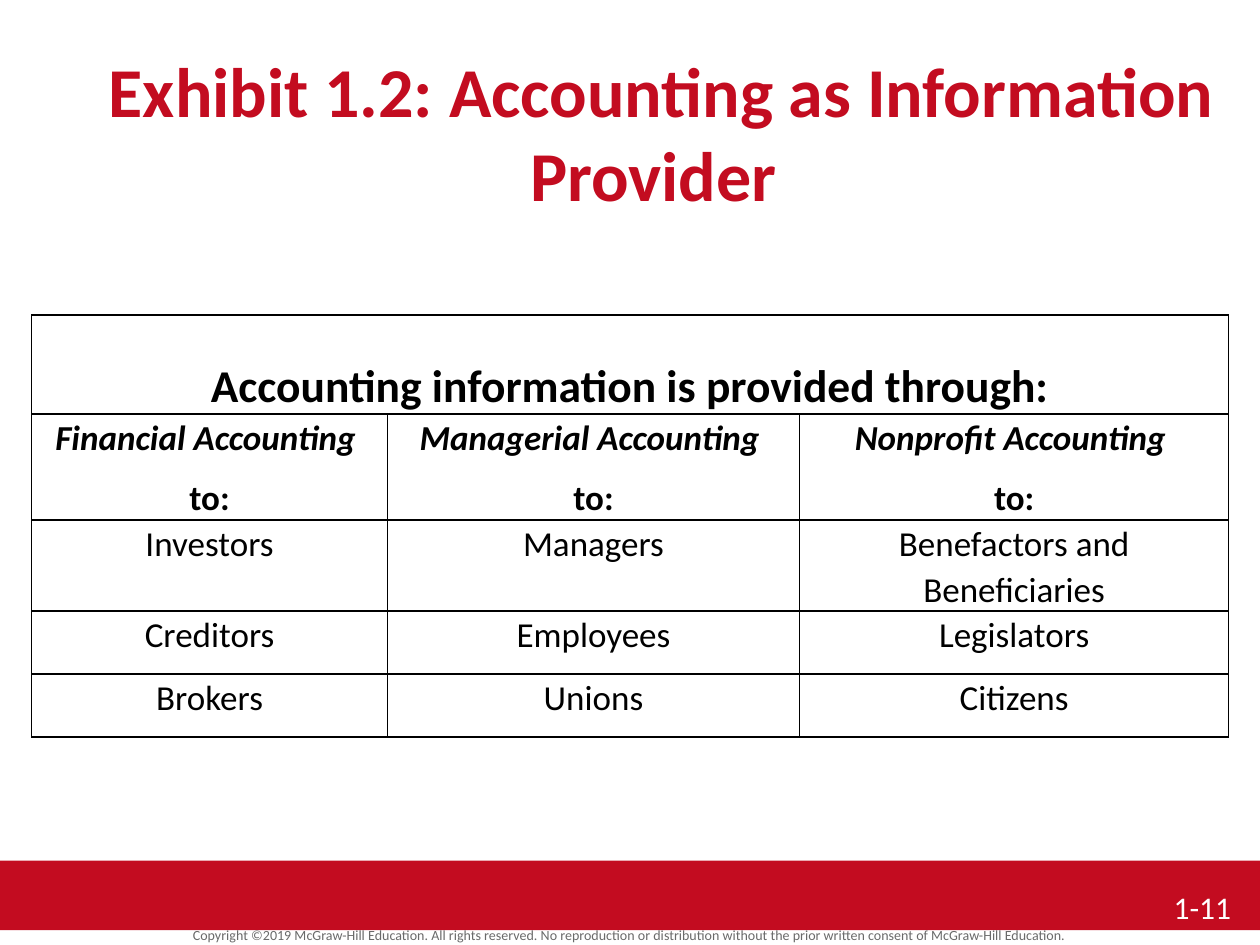
from lxml import etree
from pptx import Presentation
from pptx.dml.color import RGBColor
from pptx.enum.shapes import MSO_SHAPE as Shape
from pptx.enum.text import MSO_ANCHOR as Anchor, MSO_AUTO_SIZE as AutoSize, PP_ALIGN as Align
from pptx.oxml.ns import qn
from pptx.util import Cm, Pt

RED, BLACK, WHITE, GRAY = "C30C20", "000000", "FFFFFF", "6A6A6A"
COLUMN_WIDTHS = [7.17, 8.31, 8.65]
ROW_HEIGHTS = [2.0, 2.13, 1.84, 1.27, 1.27]
HEADING = "Accounting information is provided through:"
BRANCHES = ["Financial Accounting ", "Managerial Accounting ", "Nonprofit Accounting "]
USERS = [
    ["Investors", "Managers", "Benefactors and Beneficiaries"],
    ["Creditors", "Employees", "Legislators"],
    ["Brokers", "Unions", "Citizens"],
]


def color(value):
    return RGBColor.from_string(value)


def format_paragraph(paragraph, size, text_color, bold=False, italic=False, align=Align.CENTER):
    paragraph.alignment = align
    for run in paragraph.runs:
        font = run.font
        font.name, font.size = "Calibri", Pt(size)
        font.bold, font.italic = bold, italic
        font.color.rgb = color(text_color)


def add_title(slide, left, top, width, height):
    title = slide.shapes.title
    title.left, title.top, title.width, title.height = Cm(left), Cm(top), Cm(width), Cm(height)
    frame = title.text_frame
    frame.text = "Exhibit 1.2: Accounting as Information Provider "
    frame.word_wrap = True
    frame.auto_size = AutoSize.NONE
    frame.vertical_anchor = Anchor.TOP
    format_paragraph(frame.paragraphs[0], 40, RED, bold=True)


def add_label(slide, text, left, top, width, height):
    frame = slide.shapes.add_textbox(Cm(left), Cm(top), Cm(width), Cm(height)).text_frame
    frame.text = text
    frame.word_wrap = True
    return frame


def add_footer(slide, left, top, width, height):
    band = slide.shapes.add_shape(Shape.RECTANGLE, Cm(left), Cm(top), Cm(width), Cm(height))
    band.shadow.inherit = False
    band.fill.solid()
    band.fill.fore_color.rgb = color(RED)
    band.line.fill.background()

    notice = add_label(
        slide,
        "Copyright ©2019 McGraw-Hill Education. All rights reserved. No reproduction or "
        "distribution without the prior written consent of McGraw-Hill Education.",
        left, top + 1.29, width, 0.48)
    notice.margin_top = notice.margin_bottom = 0
    notice.vertical_anchor = Anchor.MIDDLE
    notice.paragraphs[0].line_spacing = 0.8
    format_paragraph(notice.paragraphs[0], 8, GRAY)

    number = add_label(slide, "1-11", left + width - 2.34, top + 0.43, 2.34, 1.07)
    number.margin_left = Cm(0.6)
    format_paragraph(number.paragraphs[0], 18, WHITE, align=Align.LEFT)


def style_cell(cell):
    properties = cell._tc.get_or_add_tcPr()
    for side in ("a:lnL", "a:lnR", "a:lnT", "a:lnB"):
        line = etree.SubElement(properties, qn(side), w=str(Pt(1)))
        fill = etree.SubElement(line, qn("a:solidFill"))
        etree.SubElement(fill, qn("a:srgbClr"), val=BLACK)
    cell.fill.solid()
    cell.fill.fore_color.rgb = color(WHITE)
    cell.margin_left = cell.margin_right = Cm(0.19)
    cell.margin_top = cell.margin_bottom = 0


def fill_cell(cell, lines, size, bold=False, italic_first=False):
    cell.text_frame.text = "\n".join(lines)
    for index, paragraph in enumerate(cell.text_frame.paragraphs):
        paragraph.line_spacing = 1.07
        paragraph.space_after = Pt(8)
        format_paragraph(paragraph, size, BLACK, bold, italic_first and index == 0)


def add_users_table(slide, left, top):
    table = slide.shapes.add_table(
        len(ROW_HEIGHTS), len(COLUMN_WIDTHS), Cm(left), Cm(top),
        Cm(sum(COLUMN_WIDTHS)), Cm(sum(ROW_HEIGHTS))).table
    for column, width in zip(table.columns, COLUMN_WIDTHS):
        column.width = Cm(width)
    for row, height in zip(table.rows, ROW_HEIGHTS):
        row.height = Cm(height)
    for cell in table.iter_cells():
        style_cell(cell)

    heading = table.cell(0, 0)
    heading.merge(table.cell(0, len(COLUMN_WIDTHS) - 1))
    heading.vertical_anchor = Anchor.BOTTOM
    fill_cell(heading, [HEADING], 26, bold=True)
    for column, branch in enumerate(BRANCHES):
        fill_cell(table.cell(1, column), [branch, "to:"], 20, bold=True, italic_first=True)
    for row, users in enumerate(USERS, start=2):
        for column, user in enumerate(users):
            fill_cell(table.cell(row, column), [user], 20)


def main():
    presentation = Presentation()
    presentation.slide_width, presentation.slide_height = Cm(25.4), Cm(19.05)
    slide = presentation.slides.add_slide(presentation.slide_layouts[5])
    add_footer(slide, 0, 17.35, 25.4, 1.4)
    add_title(slide, 1.9, 0.84, 22.86, 3.18)
    add_users_table(slide, 0.64, 6.35)
    presentation.save("out.pptx")


if __name__ == "__main__":
    main()
